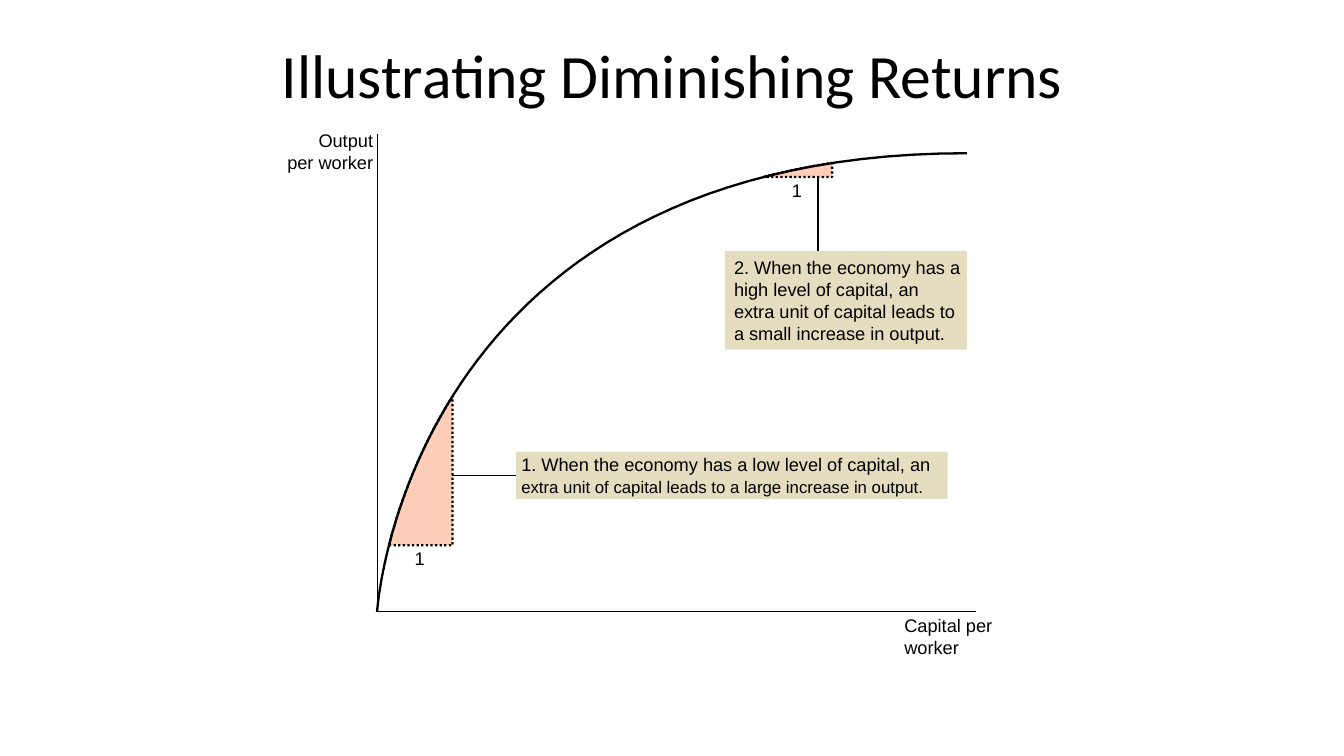
from dataclasses import dataclass

from lxml import etree
from pptx import Presentation
from pptx.dml.color import RGBColor
from pptx.enum.dml import MSO_LINE
from pptx.enum.shapes import MSO_CONNECTOR, MSO_SHAPE
from pptx.enum.text import MSO_ANCHOR, PP_ALIGN
from pptx.oxml.ns import qn
from pptx.util import Inches, Pt

RECTANGLE, STRAIGHT = MSO_SHAPE.RECTANGLE, MSO_CONNECTOR.STRAIGHT
LEFT, CENTER, RIGHT = PP_ALIGN.LEFT, PP_ALIGN.CENTER, PP_ALIGN.RIGHT
TOP, MIDDLE = MSO_ANCHOR.TOP, MSO_ANCHOR.MIDDLE
DOTTED = MSO_LINE.ROUND_DOT
TITLE_ONLY = 5
LEFT_SIDE = 1


@dataclass(frozen=True)
class Theme:
    ink: RGBColor = RGBColor.from_string("000000")
    callout: RGBColor = RGBColor.from_string("E5DDBF")
    gain: RGBColor = RGBColor.from_string("FDCDB8")
    title_font: str = "Calibri"
    body_font: str = "Arial"
    title_size: float = 44
    body_size: float = 13
    small_size: float = 12
    line_pitch: float = 15.7
    thin: float = 0.75
    thick: float = 1.63


@dataclass(frozen=True)
class Box:
    left: float
    top: float
    width: float
    height: float

    @property
    def right(self):
        return self.left + self.width

    @property
    def bottom(self):
        return self.top + self.height

    def lengths(self):
        return [Inches(side) for side in (self.left, self.top, self.width, self.height)]


THEME = Theme()


def curve_points(plot, start=0.0, end=1.0, steps=60):
    """Points of the output curve, a cubic Bezier that rises across the plot box."""
    points = []
    for step in range(steps + 1):
        t = start + (end - start) * step / steps
        across = 0.144 * (1 - t) * t**2 + t**3
        up = 3 * t**2 - 2 * t**3
        points.append((plot.left + plot.width * across, plot.bottom - plot.height * up))
    return points


def add_outline(page, points, weight, fill=None, dash=None):
    """Closed and filled when a fill is given, otherwise an open line."""
    corners = [(Inches(x), Inches(y)) for x, y in points]
    builder = page.shapes.build_freeform(*corners[0])
    builder.add_line_segments(corners[1:], close=fill is not None)
    shape = builder.convert_to_shape()
    shape.shadow.inherit = False
    if fill is None:
        shape.fill.background()
    else:
        shape.fill.solid()
        shape.fill.fore_color.rgb = fill
    shape.line.color.rgb = THEME.ink
    shape.line.width = Pt(weight)
    if dash is not None:
        shape.line.dash_style = dash


def add_leader(page, start, end):
    leader = page.shapes.add_connector(
        STRAIGHT, *[Inches(value) for value in (*start, *end)])
    leader.line.color.rgb = THEME.ink
    leader.line.width = Pt(THEME.thin)
    etree.SubElement(leader._element.spPr, qn("a:effectLst"))
    return leader


def write_lines(shape, lines, align=LEFT, anchor=TOP, indent=0, last_size=None):
    """Set one paragraph with a line break after each line but the last."""
    frame = shape.text_frame
    frame.word_wrap = False
    frame.vertical_anchor = anchor
    frame.margin_left = Inches(indent)
    frame.margin_top = frame.margin_right = frame.margin_bottom = 0
    para = frame.paragraphs[0]
    para.alignment = align
    para.line_spacing = Pt(THEME.line_pitch)
    para.font.name = THEME.body_font
    para.font.size = Pt(THEME.body_size)
    para.font.color.rgb = THEME.ink
    for index, line in enumerate(lines):
        if index:
            para.add_line_break()
        span = para.add_run()
        span.text = line
    if last_size:
        span.font.size = Pt(last_size)


def add_label(page, box, lines, align=LEFT):
    write_lines(page.shapes.add_textbox(*box.lengths()), lines, align)


def add_callout(page, box, lines, indent, last_size=None):
    callout = page.shapes.add_shape(RECTANGLE, *box.lengths())
    callout.shadow.inherit = False
    callout.fill.solid()
    callout.fill.fore_color.rgb = THEME.callout
    callout.line.fill.background()
    write_lines(callout, lines, anchor=MIDDLE, indent=indent, last_size=last_size)
    return callout


def add_title(page, box, text):
    title = page.shapes.title
    title.left, title.top, title.width, title.height = box.lengths()
    title.text_frame.text = text
    title.text_frame.vertical_anchor = MIDDLE
    para = title.text_frame.paragraphs[0]
    para.alignment = CENTER
    para.font.name = THEME.title_font
    para.font.size = Pt(THEME.title_size)
    para.font.color.rgb = THEME.ink


def add_axes(page, plot):
    add_outline(page, [(plot.left, plot.top - 0.19), (plot.left, plot.bottom),
                       (plot.right + 0.09, plot.bottom)], THEME.thin)
    add_label(page, Box(plot.left - 0.94, plot.top - 0.24, 0.9, 0.44),
              ["Output", "per worker"], RIGHT)
    add_label(page, Box(plot.right - 0.62, plot.bottom + 0.02, 0.9, 0.44),
              ["Capital per", "worker"])


def add_gain(page, plot, start, end):
    """Shade the rise in output for one unit of capital; return its lower right corner."""
    arc = curve_points(plot, start, end, steps=20)
    corner = (arc[-1][0], arc[0][1])
    add_outline(page, arc + [corner], THEME.thick, THEME.gain, DOTTED)
    middle = (arc[0][0] + corner[0]) / 2
    add_label(page, Box(middle - 0.06, corner[1] + 0.02, 0.1, 0.22), ["1"])
    return corner


def add_diagram(page, plot):
    add_axes(page, plot)
    low_corner = add_gain(page, plot, 0.24, 0.48)
    high_corner = add_gain(page, plot, 0.862, 0.913)
    add_outline(page, curve_points(plot), THEME.thick)

    low_box = Box(plot.left + 1.38, plot.bottom - 1.59, 4.28, 0.47)
    low = add_callout(page, low_box, [
        "1. When the economy has a low level of capital, an",
        "extra unit of capital leads to a large increase in output.",
    ], 0.05, THEME.small_size)
    level = low_box.top + low_box.height / 2
    leader = add_leader(page, (low_box.left, level), (low_corner[0], level))
    leader.begin_connect(low, LEFT_SIDE)

    high_box = Box(plot.right - 2.4, plot.top + 0.97, 2.4, 0.98)
    add_callout(page, high_box, [
        "2. When the economy has a",
        "high level of capital, an",
        "extra unit of capital leads to",
        "a small increase in output.",
    ], 0.09)
    across = high_corner[0] - 0.14
    add_leader(page, (across, high_corner[1]), (across, high_box.top))


def main():
    deck = Presentation()
    deck.slide_width, deck.slide_height = Inches(13.33), Inches(7.5)
    page = deck.slides.add_slide(deck.slide_layouts[TITLE_ONLY])
    add_title(page, Box(2.17, 0.17, 9, 1.13), "Illustrating Diminishing Returns")
    add_diagram(page, Box(3.74, 1.52, 5.85, 4.55))
    deck.save("out.pptx")


if __name__ == "__main__":
    main()
